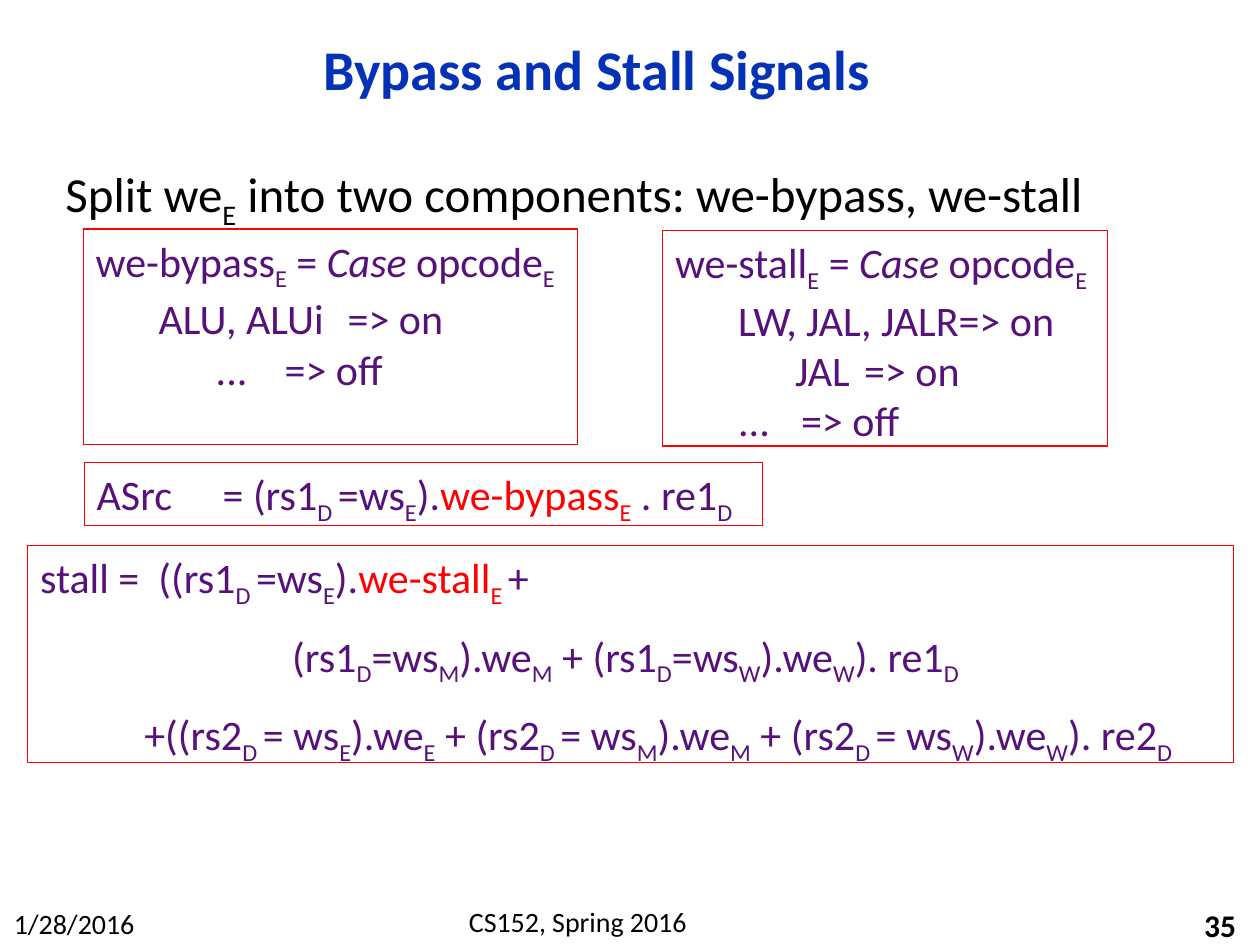
from dataclasses import dataclass

from lxml import etree
from pptx import Presentation
from pptx.dml.color import RGBColor
from pptx.enum.shapes import MSO_SHAPE
from pptx.enum.text import MSO_ANCHOR, PP_ALIGN
from pptx.oxml.ns import qn
from pptx.util import Cm, Pt

RECTANGLE = MSO_SHAPE.RECTANGLE
TOP, MIDDLE = MSO_ANCHOR.TOP, MSO_ANCHOR.MIDDLE
LEFT, CENTER, RIGHT = PP_ALIGN.LEFT, PP_ALIGN.CENTER, PP_ALIGN.RIGHT

FONT = "Calibri"
BLACK, BLUE, PURPLE, RED = "000000", "0332B7", "56127A", "FF0000"
# Marks that switch a format on and off inside a line
SUBSCRIPT, ITALIC, HIGHLIGHT = "~", "^", "|"


@dataclass
class Line:
    text: str
    indent: float = 0  # centimetres
    tab: float = 0  # centimetres, 0 for no tab stop


@dataclass
class EquationBox:
    left: float
    top: float
    width: float
    height: float
    lines: list[Line]
    gap: float = 0  # points between lines


def color(value: str) -> RGBColor:
    return RGBColor.from_string(value)


def add_runs(paragraph, text: str, size: float, ink: str, bold: bool) -> None:
    """Add the text as runs, changing format at each mark."""
    active = {SUBSCRIPT: False, ITALIC: False, HIGHLIGHT: False}
    pending = ""
    for character in text + SUBSCRIPT:
        if character not in active:
            pending += character
            continue
        if pending:
            run = paragraph.add_run()
            run.text = pending
            run.font.name, run.font.size = FONT, Pt(size)
            run.font.bold, run.font.italic = bold, active[ITALIC]
            run.font.color.rgb = color(RED if active[HIGHLIGHT] else ink)
            if active[SUBSCRIPT]:
                run.font._element.set("baseline", "-25000")
            pending = ""
        active[character] = not active[character]


def set_indent(paragraph, line: Line) -> None:
    properties = paragraph._p.get_or_add_pPr()
    properties.set("marL", "0")
    properties.set("indent", str(Cm(line.indent)))
    if line.tab:
        stops = etree.SubElement(properties, qn("a:tabLst"))
        etree.SubElement(stops, qn("a:tab"), pos=str(Cm(line.tab)), algn="l")


def write_text(shape, lines: list[Line], *, size: float, ink: str = BLACK,
               bold: bool = False, align=LEFT, anchor=TOP, wrap: bool = True,
               gap: float = 0, spacing: float = 1.0) -> None:
    frame = shape.text_frame
    frame.word_wrap, frame.vertical_anchor = wrap, anchor
    for number, line in enumerate(lines):
        paragraph = frame.add_paragraph() if number else frame.paragraphs[0]
        paragraph.alignment, paragraph.line_spacing = align, spacing
        paragraph.space_before = Pt(gap if number else 0)
        set_indent(paragraph, line)
        add_runs(paragraph, line.text, size, ink, bold)


def add_label(slide, text: str, left: float, top: float, width: float,
              height: float, **text_format) -> None:
    shape = slide.shapes.add_textbox(Cm(left), Cm(top), Cm(width), Cm(height))
    write_text(shape, [Line(text)], **text_format)


def add_equation_box(slide, box: EquationBox) -> None:
    shape = slide.shapes.add_shape(RECTANGLE, Cm(box.left), Cm(box.top),
                                   Cm(box.width), Cm(box.height))
    shape.shadow.inherit = False
    shape.fill.background()
    shape.line.color.rgb = color(RED)
    shape.line.width = Pt(0.75)
    write_text(shape, box.lines, size=24, ink=PURPLE, gap=box.gap)


CASE_INDENT, DEEP_INDENT, RESULT_TAB = 1.27, 2.42, 6.35

EQUATION_BOXES = [
    EquationBox(1.68, 4.62, 9.96, 4.34, [
        Line("we-bypass~E~ = ^Case ^opcode~E~"),
        Line("ALU, ALUi\t=> on", CASE_INDENT, RESULT_TAB),
        Line("...\t=> off", DEEP_INDENT, RESULT_TAB),
    ]),
    EquationBox(13.36, 4.65, 8.97, 4.34, [
        Line("we-stall~E~ = ^Case ^opcode~E~"),
        Line("LW, JAL, JALR=> on", CASE_INDENT),
        Line("JAL\t=> on", DEEP_INDENT, RESULT_TAB),
        Line("...\t=> off", CASE_INDENT, RESULT_TAB),
    ]),
    EquationBox(1.7, 9.32, 13.67, 1.27, [
        Line("ASrc\t= (rs1~D ~=ws~E~).|we-bypass~E~| . re1~D~", tab=2.54),
    ]),
    EquationBox(0.56, 11, 24.31, 4.37, [
        Line("stall =  ((rs1~D ~=ws~E~).|we-stall~E ~|+"),
        Line("(rs1~D~=ws~M~).we~M~ + (rs1~D~=ws~W~).we~W~). re1~D~", 5.08),
        Line("+((rs2~D ~= ws~E~).we~E~ + (rs2~D ~= ws~M~).we~M~"
             " + (rs2~D ~= ws~W~).we~W~). re2~D~", 2.1),
    ], gap=12),
]


def main() -> None:
    presentation = Presentation()
    presentation.slide_width, presentation.slide_height = Cm(25.4), Cm(19.05)
    slide = presentation.slides.add_slide(presentation.slide_layouts[6])

    # Footer
    add_label(slide, "1/28/2016", 0.03, 18.16, 2.97, 0.94, size=16, wrap=False)
    add_label(slide, "CS152, Spring 2016", 7.42, 18.11, 8.46, 0.94,
              size=16, align=CENTER)
    add_label(slide, "35", 19.89, 18.24, 5.28, 0.81,
              size=18, bold=True, align=RIGHT, anchor=MIDDLE)

    # Title and introduction
    add_label(slide, "Bypass and Stall Signals", 1.9, 0.43, 20.27, 2.06,
              size=32, ink=BLUE, bold=True, align=CENTER, anchor=MIDDLE,
              spacing=0.9)
    add_label(slide, "Split we~E~ into two components: we-bypass, we-stall",
              1.07, 3.18, 21.39, 1.45, size=28)

    # Signal equations
    for box in EQUATION_BOXES:
        add_equation_box(slide, box)

    presentation.save("out.pptx")


if __name__ == "__main__":
    main()
